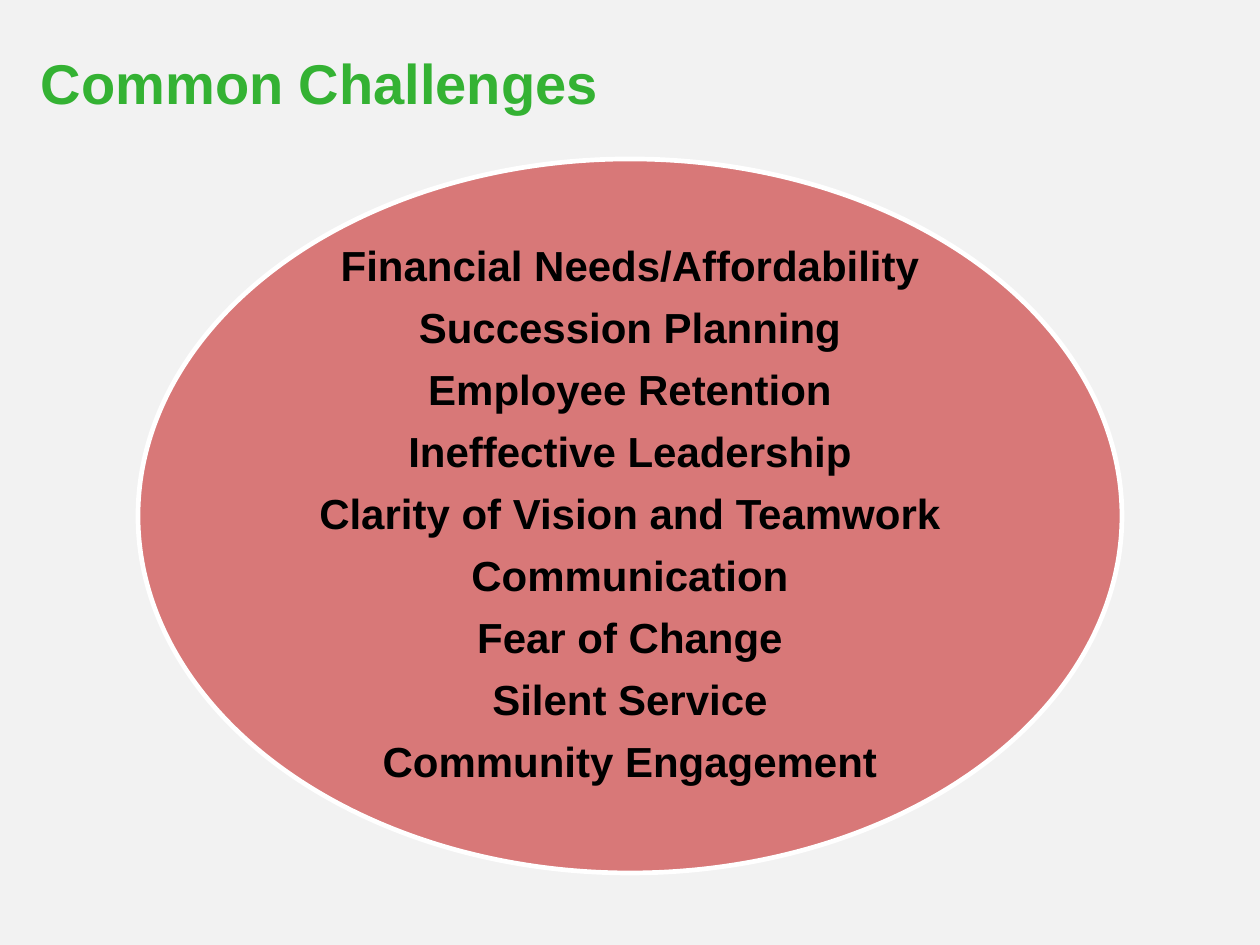
from pptx import Presentation
from pptx import util as u
from pptx.dml.color import RGBColor
from pptx.enum import shapes, text
from pptx.oxml.ns import qn
from lxml import etree

SCALE = 914400 / 168  # EMU per px
FONT = "Arial"
ITEMS = [
    "Financial Needs/Affordability",
    "Succession Planning",
    "Employee Retention",
    "Ineffective Leadership",
    "Clarity of Vision and Teamwork",
    "Communication",
    "Fear of Change",
    "Silent Service",
    "Community Engagement",
]


def px(n):
    return u.Emu(round(n * SCALE))


def paint(color, value):
    color.rgb = RGBColor.from_string(value)


def style(par, size, color, align):
    par.alignment = align
    font = par.font
    font.name, font.size, font.bold = FONT, u.Pt(size), True
    paint(font.color, color)


def add_title(slide, words, *box):
    title = slide.shapes.title
    title.left, title.top, title.width, title.height = map(px, box)
    frame = title.text_frame
    frame.text = words
    frame.vertical_anchor = text.MSO_ANCHOR.MIDDLE
    style(frame.paragraphs[0], 24, "34B233", text.PP_ALIGN.LEFT)


def add_oval(slide, fill, alpha, *box):
    oval = slide.shapes.add_shape(shapes.MSO_SHAPE.OVAL, *map(px, box))
    oval.shadow.inherit = False
    oval.fill.solid()
    paint(oval.fill.fore_color, fill)
    paint(oval.line.color, "FFFFFF")
    oval.line.width = u.Pt(2)
    # Transparency of the fill, in percent
    tint = oval.fill._xPr.find(qn("a:solidFill"))[0]
    etree.SubElement(tint, qn("a:alpha")).set("val", str(alpha * 1000))


def add_list(slide, items, *box):
    frame = slide.shapes.add_textbox(*map(px, box)).text_frame
    frame.word_wrap = True
    frame.vertical_anchor = text.MSO_ANCHOR.MIDDLE
    frame.margin_left = frame.margin_right = px(12)
    frame.margin_top = frame.margin_bottom = px(12)
    frame.text = "\n".join(items)
    for par in frame.paragraphs:
        par.line_spacing = 0.9
        par.space_after = u.Pt(7.1)
        style(par, 18, "000000", text.PP_ALIGN.CENTER)


def main():
    deck = Presentation()
    deck.slide_width, deck.slide_height = px(1260), px(945)
    slide = deck.slides.add_slide(deck.slide_layouts[5])

    # Background
    back = slide.background.fill
    back.solid()
    paint(back.fore_color, "F2F2F2")

    # Title, then the oval with its list of challenges
    add_title(slide, "Common Challenges", 24, 25, 921, 114)
    add_oval(slide, "C00000", 50, 138, 159, 984, 714)
    add_list(slide, ITEMS, 282, 264, 696, 504)

    deck.save("out.pptx")


if __name__ == "__main__":
    main()
